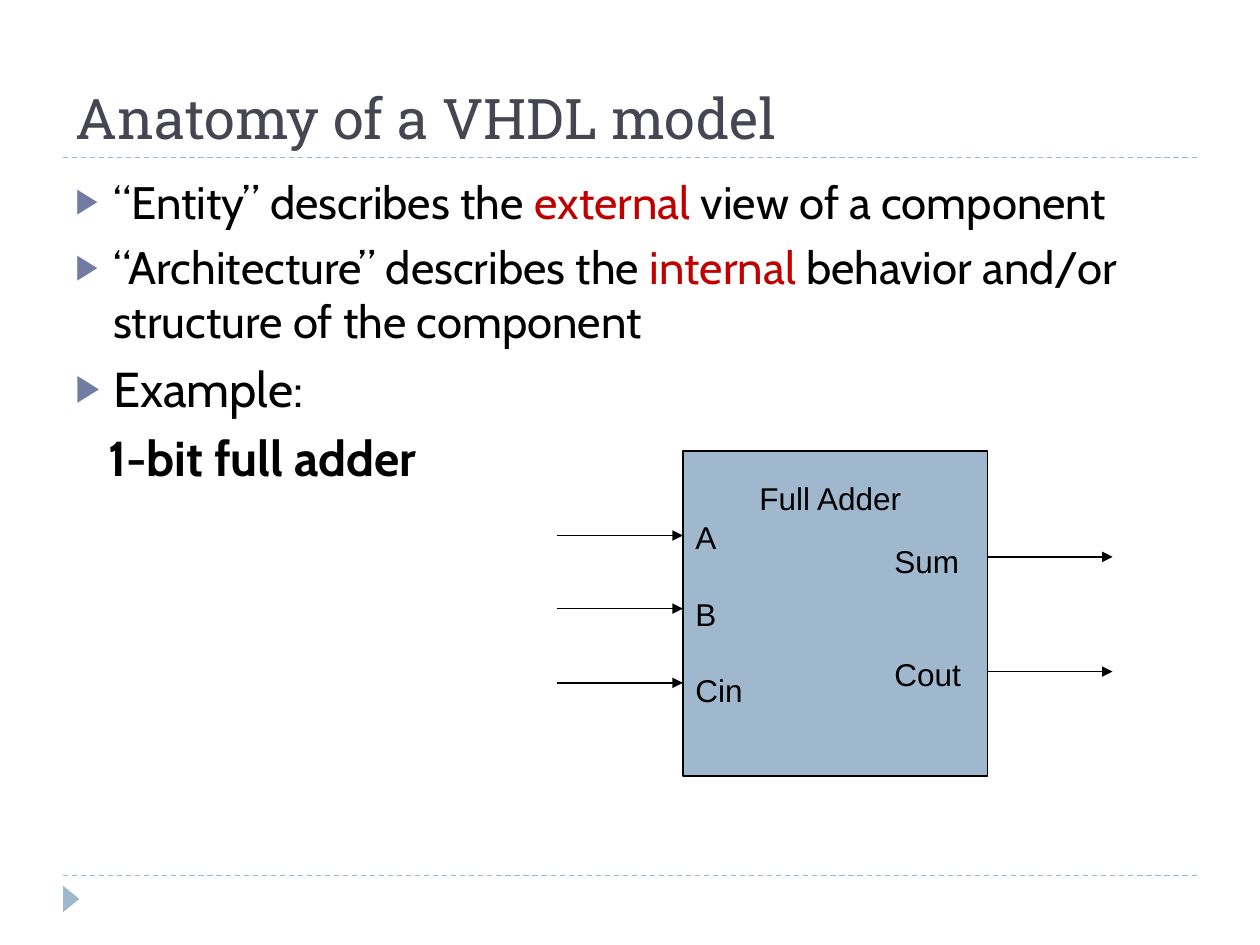
from pptx import Presentation
from pptx import util as u
from pptx.dml.color import RGBColor
from pptx.enum import dml, shapes, text
from pptx.oxml.ns import qn
from lxml import etree

In, Pt, hue = u.Inches, u.Pt, RGBColor.from_string
BLUE, BLACK, RED = "9FB8CD", "000000", "C00000"


def write(frame, paras, font="Arial", size=18, color=BLACK, gap=0,
          align=text.PP_ALIGN.LEFT, anchor=text.MSO_ANCHOR.TOP):
    """Fill a frame; each paragraph is a list of (words, format) runs."""
    frame.word_wrap, frame.vertical_anchor = True, anchor
    for i, runs in enumerate(paras):
        para = frame.paragraphs[0] if i == 0 else frame.add_paragraph()
        para.alignment = align
        para.space_before = Pt(gap if i else 0)
        for words, form in runs:
            run = para.add_run()
            run.text = words
            run.font.name = font
            run.font.size = Pt(form.get("size", size))
            run.font.bold = form.get("bold", False)
            run.font.color.rgb = hue(form.get("color", color))


def draw(x1, y1, x2, y2, color=BLACK, dash=False, head=False):
    line = pic.add_connector(shapes.MSO_CONNECTOR.STRAIGHT,
                             In(x1), In(y1), In(x2), In(y2))
    line.line.color.rgb, line.line.width = hue(color), Pt(0.75)
    if dash:
        line.line.dash_style = dml.MSO_LINE.DASH
    if head:
        etree.SubElement(line.line._get_or_add_ln(), qn("a:tailEnd"), type="triangle")
    etree.SubElement(line._element.spPr, qn("a:effectLst"))


deck = Presentation()
deck.slide_width, deck.slide_height = In(10), In(7.5)
slide = deck.slides.add_slide(deck.slide_layouts[5])
pic = slide.shapes

# Rules and corner mark
for y in (6.95, 1.25):
    draw(0.5, y, 9.5, y, color=BLUE, dash=True)
mark = pic.add_shape(shapes.MSO_SHAPE.ISOSCELES_TRIANGLE,
                     In(0.46), In(7.07), In(0.21), In(0.13))
mark.rotation = 90
mark.shadow.inherit = False
mark.fill.solid()
mark.fill.fore_color.rgb = hue(BLUE)
mark.line.fill.background()

# Title
title = pic.title
title.left, title.top, title.width, title.height = In(0.5), In(0.17), In(9), In(1.08)
write(title.text_frame, [[("Anatomy of a VHDL model", {})]], font="Roboto Slab",
      size=32, color="464653", anchor=text.MSO_ANCHOR.BOTTOM)

# Bullets, the last line being an unmarked one
body = pic.add_textbox(In(0.5), In(1.33), In(9), In(5.4)).text_frame
write(body, [
    [("“Entity” describes the ", {}), ("external", {"color": RED}),
     (" view of a component", {})],
    [("“Architecture” describes the ", {}), ("internal", {"color": RED}),
     (" behavior and/or structure of the component", {})],
    [("Example:", {"size": 28})],
    [("1-bit full adder", {"size": 28, "bold": True})],
], font="Cabin", size=26, gap=6)
body.paragraphs[0].space_before = Pt(6)
*marked, plain = body.paragraphs
for para in marked:
    prop = para._p.get_or_add_pPr()
    prop.set("marL", str(In(0.3)))
    prop.set("indent", str(-In(0.3)))
    tint = etree.SubElement(prop, qn("a:buClr"))
    etree.SubElement(tint, qn("a:srgbClr"), val="727CA3")
    etree.SubElement(prop, qn("a:buSzPct"), val="76000")
    etree.SubElement(prop, qn("a:buFont"), typeface="Arial")
    etree.SubElement(prop, qn("a:buChar"), char="▶")
plain._p.get_or_add_pPr().set("marL", str(In(0.26)))

# Adder block with its inputs
box = pic.add_shape(shapes.MSO_SHAPE.RECTANGLE, In(5.42), In(3.58), In(2.42), In(2.58))
box.shadow.inherit = False
box.fill.solid()
box.fill.fore_color.rgb = hue(BLUE)
box.line.color.rgb, box.line.width = hue(BLACK), Pt(0.75)
write(box.text_frame, [[(pin, {})] for pin in ("A", "B", "Cin")],
      gap=22, anchor=text.MSO_ANCHOR.MIDDLE)

# Signal arrows
for y in (4.25, 4.83, 5.42):
    draw(4.42, y, 5.42, y, head=True)
for y in (4.42, 5.33):
    draw(7.83, y, 8.83, y, head=True)

# Outputs and block name
outs = pic.add_textbox(In(7), In(4.25), In(0.83), In(1.3))
write(outs.text_frame, [[("Sum", {})], [("Cout", {})]], gap=43)
name = pic.add_textbox(In(5.92), In(3.75), In(1.34), In(0.4))
write(name.text_frame, [[("Full Adder", {})]], align=text.PP_ALIGN.CENTER)
for label in (outs, name):
    label.text_frame.word_wrap = False

deck.save("out.pptx")
